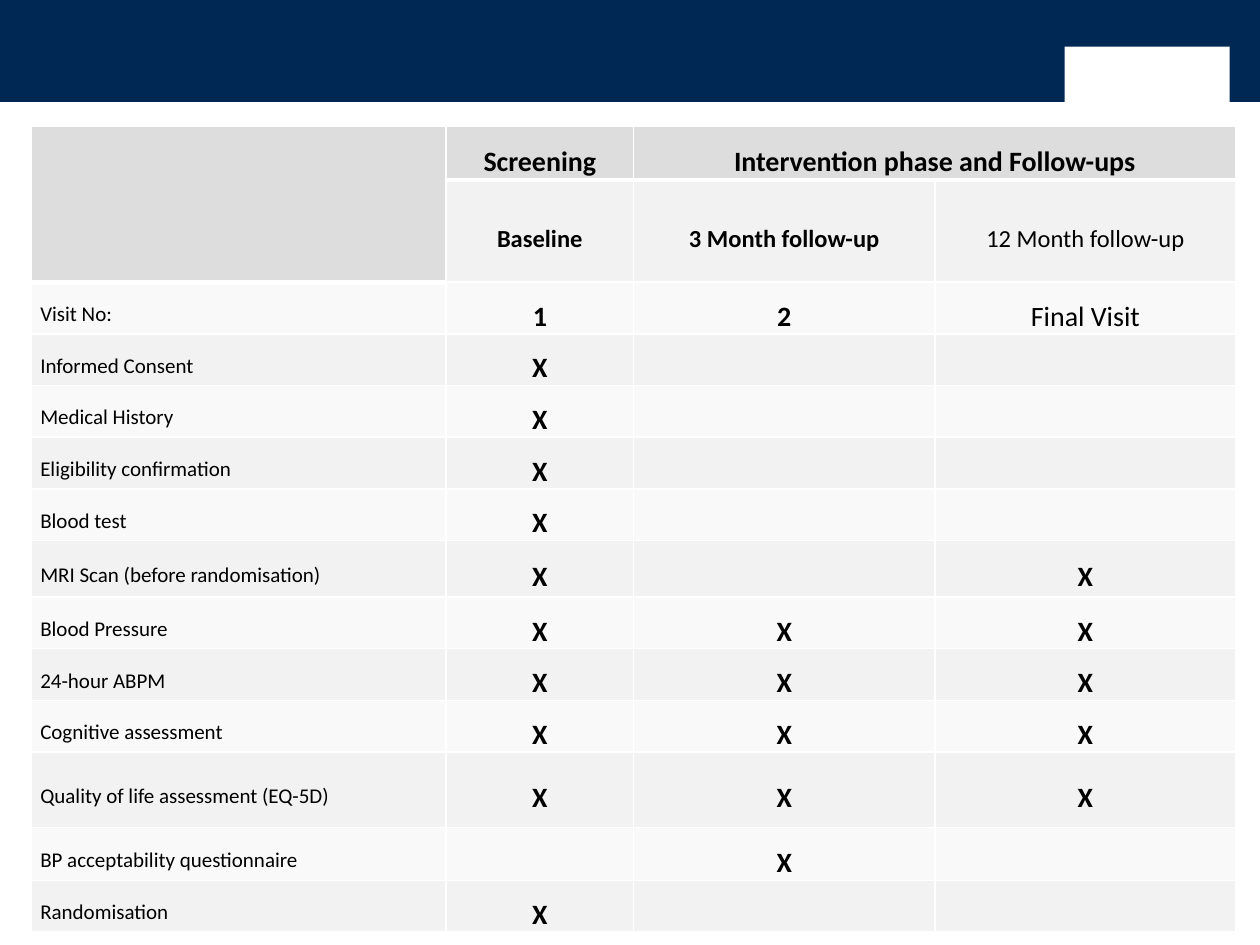
from lxml import etree
from pptx import Presentation
from pptx import util as u
from pptx.dml.color import RGBColor
from pptx.enum import shapes, text
from pptx.oxml import ns

COLORS = {"banner": "002855", "white": "FFFFFF", "black": "000000",
          "header": "DDDDDD", "odd": "F2F2F2", "even": "F9F9F9"}
COLUMNS = [3.29, 1.49, 2.39, 2.39]
HEADER_ROWS = [0.43, 0.81]
ROW = 0.41
TALL_ROWS = {7: 0.45, 11: 0.6, 12: 0.42}
ROWS = [
    ["", "Screening", "Intervention phase and Follow-ups", ""],
    ["", "Baseline", "3 Month follow-up", "12 Month follow-up"],
    ["Visit No:", "1", "2", "Final Visit"],
    ["Informed Consent", "X", "", ""],
    ["Medical History", "X", "", ""],
    ["Eligibility confirmation", "X", "", ""],
    ["Blood test", "X", "", ""],
    ["MRI Scan (before randomisation)", "X", "", "X"],
    ["Blood Pressure", "X", "X", "X"],
    ["24-hour ABPM", "X", "X", "X"],
    ["Cognitive assessment", "X", "X", "X"],
    ["Quality of life assessment (EQ-5D)", "X", "X", "X"],
    ["BP acceptability questionnaire", "", "X", ""],
    ["Randomisation", "X", "", ""],
]


def write(cell, words, size=16, bold=True, align=text.PP_ALIGN.CENTER):
    para = cell.text_frame.paragraphs[0]
    para.alignment = align
    para.line_spacing = 1.5
    span = para.add_run()
    span.text = words
    span.font.name = "Calibri"
    span.font.size = u.Pt(size)
    span.font.bold = bold
    span.font.color.rgb = RGBColor.from_string(COLORS["black"])


def add_borders(cell, **widths):
    """Draw white cell edges, 1 pt unless L, R, T or B gives another width."""
    properties = cell._tc.get_or_add_tcPr()
    for side in "LRTB":
        line = etree.SubElement(properties, ns.qn(f"a:ln{side}"),
                                w=str(u.Pt(widths.get(side, 1))))
        fill = etree.SubElement(line, ns.qn("a:solidFill"))
        etree.SubElement(fill, ns.qn("a:srgbClr"), val=COLORS["white"])


deck = Presentation()
deck.slide_width, deck.slide_height = u.Inches(10), u.Inches(7.5)
slide = deck.slides.add_slide(deck.slide_layouts[6])

# Banner, with a plain block where the emblem sits
for area, color in [((0, 0, 10, 0.81), "banner"), ((8.45, 0.37, 1.31, 0.44), "white")]:
    block = slide.shapes.add_shape(shapes.MSO_SHAPE.RECTANGLE, *map(u.Inches, area))
    block.shadow.inherit = False
    block.fill.solid()
    block.fill.fore_color.rgb = RGBColor.from_string(COLORS[color])
    block.line.fill.background()

# Visit schedule
heights = HEADER_ROWS + [TALL_ROWS.get(r, ROW) for r in range(2, len(ROWS))]
table = slide.shapes.add_table(
    len(ROWS), len(COLUMNS), u.Inches(0.25), u.Inches(1),
    u.Inches(sum(COLUMNS)), u.Inches(sum(heights))).table
table.first_row = table.horz_banding = False
for column, width in zip(table.columns, COLUMNS):
    column.width = u.Inches(width)
for row, height in zip(table.rows, heights):
    row.height = u.Inches(height)

for r, entries in enumerate(ROWS):
    for c, words in enumerate(entries):
        cell = table.cell(r, c)
        cell.margin_left = cell.margin_right = u.Inches(0.07)
        cell.margin_top = cell.margin_bottom = 0
        cell.vertical_anchor = text.MSO_ANCHOR.MIDDLE

        in_header = r == 0 or (r == 1 and c == 0)
        last_header_row = 1 if c == 0 else 0
        add_borders(cell, B=3 if in_header else 1,
                    T=3 if r == last_header_row + 1 else 1)
        color = "header" if in_header else "odd" if r % 2 else "even"
        cell.fill.solid()
        cell.fill.fore_color.rgb = RGBColor.from_string(COLORS[color])

        if words and c == 0:
            write(cell, words, size=12, bold=False, align=text.PP_ALIGN.LEFT)
        elif words:
            write(cell, words, size=14 if r == 1 else 16,
                  bold=c < 3 or words == "X")

table.cell(0, 0).merge(table.cell(1, 0))
table.cell(0, 2).merge(table.cell(0, 3))

deck.save("out.pptx")
